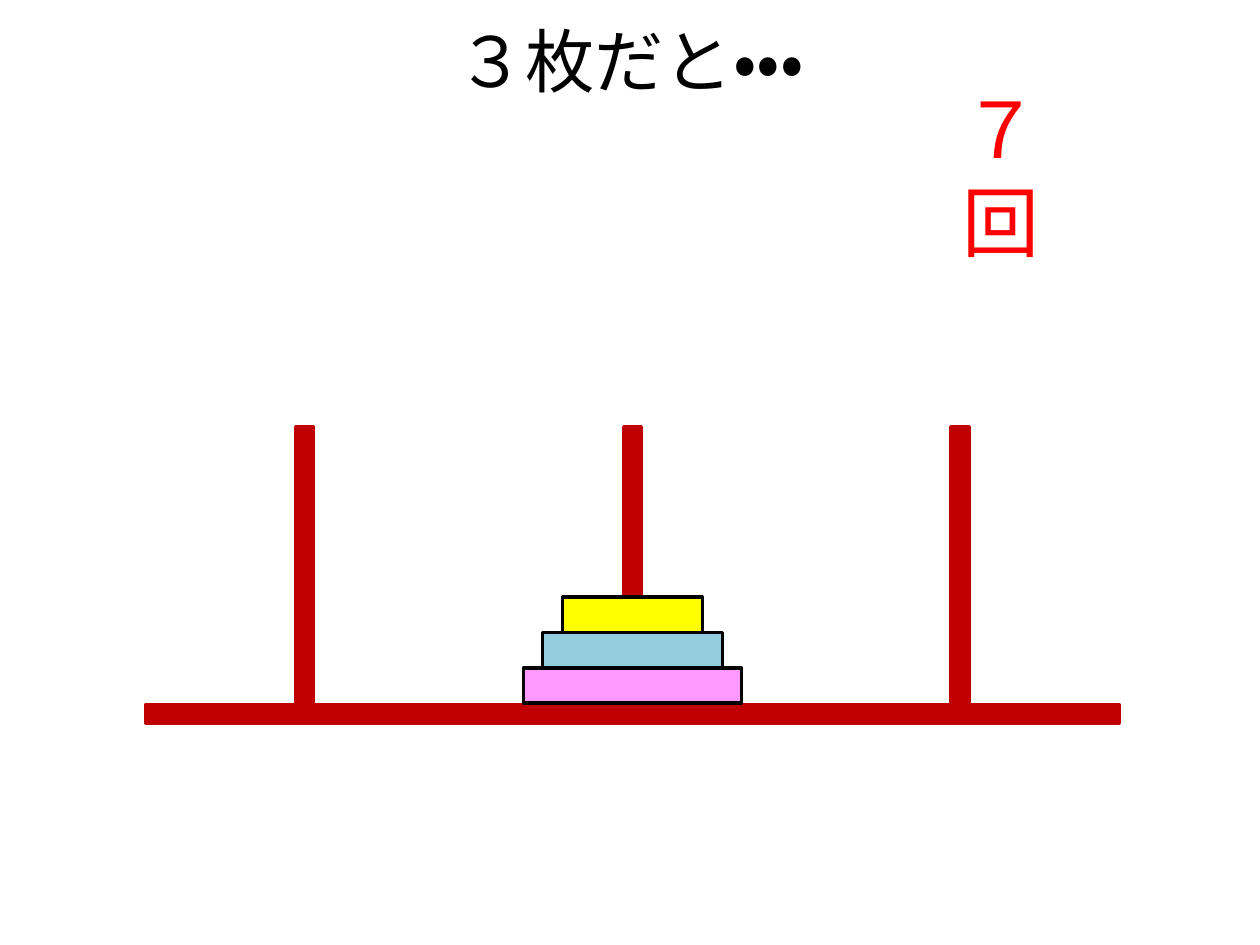
"""Build the three-disk Tower of Hanoi slide."""
from pptx import Presentation, util as u
from pptx.dml.color import RGBColor
from pptx.enum import lang, shapes, text

JAPANESE, ENGLISH = lang.MSO_LANGUAGE_ID.JAPANESE, lang.MSO_LANGUAGE_ID.ENGLISH_US
TITLE = ([("３枚だと", JAPANESE), ("・・・", ENGLISH)], (0.5, 0.13, 9, 0.69),
         39.6, "000000", text.PP_ALIGN.CENTER, text.MSO_ANCHOR.MIDDLE)
MOVES = ([("７回", JAPANESE)], (7.54, 0.6, 1.24, 0.84),
         44, "FF0000", text.PP_ALIGN.LEFT, text.MSO_ANCHOR.TOP)
WOOD = "C00000"
DISKS = [(1.73, "FF99FF"), (1.43, "93CDDD"), (1.11, "FFFF00")]
DISK_HEIGHT, DISK_BOTTOM = 0.28, 5.58
CENTRE, PEG_GAP = 5.02, 2.6
PEG_TOP, PEG_WIDTH = 3.39, 0.14
BASE_TOP, BASE_WIDTH, BASE_HEIGHT = 5.59, 7.72, 0.15

prs = Presentation()
prs.slide_width, prs.slide_height = u.Inches(10), u.Inches(7.5)
slide = prs.slides.add_slide(prs.slide_layouts[6])


def colour(value):
    return RGBColor.from_string(value)


def add_block(centre, top, width, height, fill, line):
    block = slide.shapes.add_shape(
        shapes.MSO_SHAPE.RECTANGLE,
        *map(u.Inches, (centre - width / 2, top, width, height)))
    block.shadow.inherit = False
    block.fill.solid()
    block.fill.fore_color.rgb = colour(fill)
    block.line.color.rgb = colour(line)
    block.line.width = u.Pt(2)


def add_label(parts, place, size, ink, align, anchor):
    frame = slide.shapes.add_textbox(*map(u.Inches, place)).text_frame
    frame.word_wrap, frame.vertical_anchor = True, anchor
    paragraph = frame.paragraphs[0]
    paragraph.alignment = align
    paragraph.font.name, paragraph.font.size = "Calibri", u.Pt(size)
    paragraph.font.color.rgb = colour(ink)
    for words, language in parts:
        run = paragraph.add_run()
        run.text, run.font.language_id = words, language


add_label(*TITLE)
add_block(CENTRE, BASE_TOP, BASE_WIDTH, BASE_HEIGHT, WOOD, WOOD)
for step in (-1, 0, 1):
    add_block(CENTRE + step * PEG_GAP, PEG_TOP, PEG_WIDTH, BASE_TOP - PEG_TOP, WOOD, WOOD)
for level, (width, fill) in enumerate(DISKS, 1):
    add_block(CENTRE, DISK_BOTTOM - level * DISK_HEIGHT, width, DISK_HEIGHT, fill, "000000")
add_label(*MOVES)

prs.save("out.pptx")
